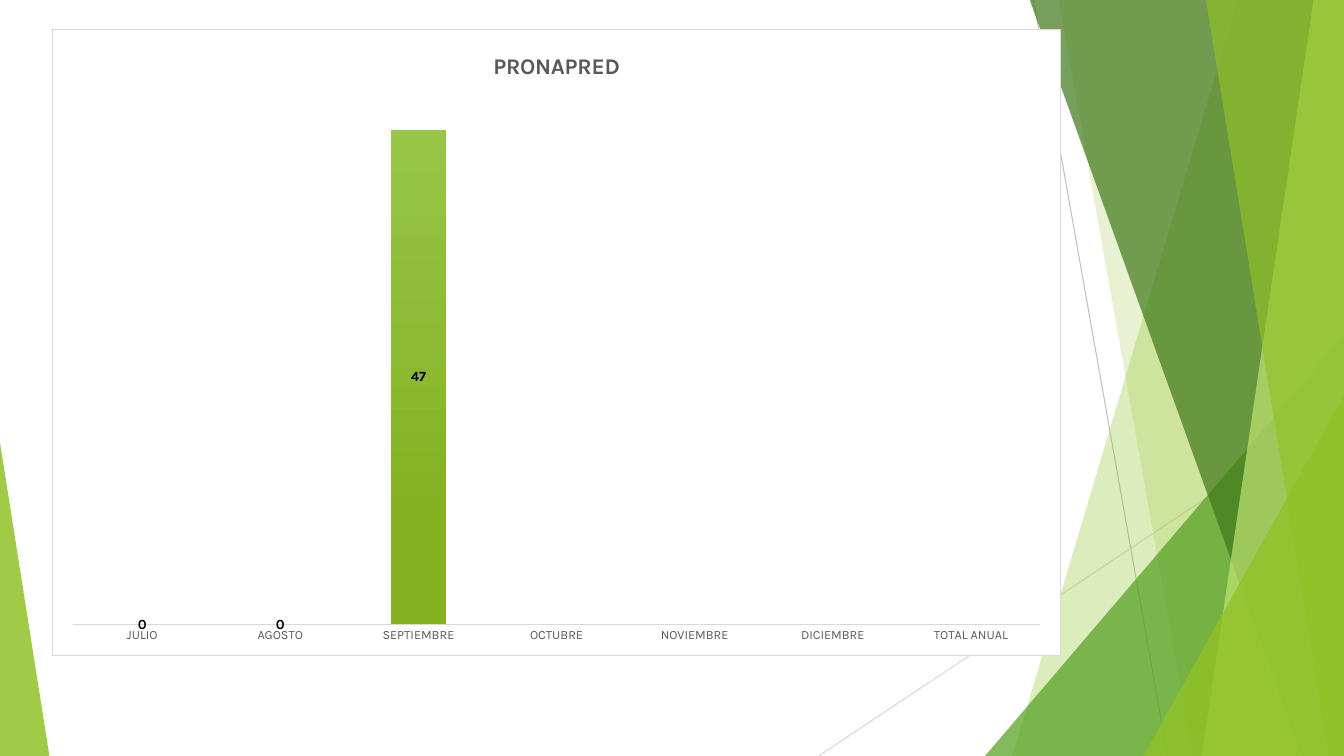
from dataclasses import dataclass

from lxml import etree
from pptx import Presentation
from pptx.chart.data import CategoryChartData
from pptx.dml.color import RGBColor
from pptx.enum import chart as ch, shapes as sh
from pptx.oxml import parse_xml
from pptx.oxml.ns import nsdecls, qn
from pptx.util import Inches, Pt


@dataclass(frozen=True)
class Theme:
    font: str = "Karla"
    lime: str = "90C226"
    green: str = "54A021"
    dark: str = "3F7819"
    pale: str = "C0E474"
    white: str = "FFFFFF"
    black: str = "000000"
    gray: str = "595959"
    rule: str = "D9D9D9"
    ray: str = "BFBFBF"
    top: str = "97C547"
    base: str = "84B223"
    title: int = 16
    label: int = 10
    tick: int = 9


T = Theme()
WIDE, HIGH = 13.33, 7.5
MONTHS = ("JULIO", "AGOSTO", "SEPTIEMBRE", "OCTUBRE", "NOVIEMBRE",
          "DICIEMBRE", "TOTAL ANUAL")
COUNTS = (0, 0, 47, None, None, None, None)


def rgb(color):
    return RGBColor.from_string(color)


def paint(shape, color, alpha):
    """Fill a shape with a colour at alpha percent opacity."""
    shape.shadow.inherit = False
    shape.line.fill.background()
    shape.fill.solid()
    shape.fill.fore_color.rgb = rgb(color)
    tint = shape.fill._xPr.find(".//" + qn("a:srgbClr"))
    etree.SubElement(tint, qn("a:alpha")).set("val", str(alpha * 1000))


def add_ray(slide, start, end, color):
    ends = [Inches(v) for v in (*start, *end)]
    ray = slide.shapes.add_connector(sh.MSO_CONNECTOR.STRAIGHT, *ends)
    ray.line.color.rgb = rgb(color)
    ray.line.width = Pt(0.75)
    etree.SubElement(ray._element.spPr, qn("a:effectLst"))


def add_band(slide, top, foot, color, alpha):
    """Fill from a slanted left edge to the right side of the slide."""
    points = [(top, -0.01), (WIDE, -0.01), (WIDE, HIGH), (foot, HIGH)]
    spots = [(Inches(x), Inches(y)) for x, y in points]
    pen = slide.shapes.build_freeform(*spots[0])
    pen.add_line_segments(spots[1:], close=True)
    paint(pen.convert_to_shape(), color, alpha)


def add_wedge(slide, left, width, height, apex, color, alpha):
    """Stand a triangle on the bottom edge of the slide."""
    box = [Inches(v) for v in (left, HIGH - height, width, height)]
    wedge = slide.shapes.add_shape(sh.MSO_SHAPE.ISOSCELES_TRIANGLE, *box)
    wedge.adjustments[0] = apex
    paint(wedge, color, alpha)


def set_font(font, size, color, bold=False):
    font.name = T.font
    font.size = Pt(size)
    font.bold = bold
    font.color.rgb = rgb(color)


def frame(chart):
    """Give the chart its background, border and plot position."""
    back = parse_xml(
        f'<c:spPr {nsdecls("c", "a")}>'
        f'<a:solidFill><a:srgbClr val="{T.white}"/></a:solidFill>'
        f'<a:ln w="{Pt(0.75)}"><a:solidFill><a:srgbClr val="{T.rule}"/>'
        '</a:solidFill></a:ln></c:spPr>')
    root = chart._chartSpace
    root.find(qn("c:txPr")).addprevious(back)

    area = root.find(".//" + qn("c:plotArea"))
    for old in area.findall(qn("c:layout")):
        area.remove(old)
    spot = {"layoutTarget": "inner", "xMode": "edge", "yMode": "edge",
            "x": 0.02, "y": 0.11, "w": 0.96, "h": 0.84}
    rows = "".join(f'<c:{k} val="{v}"/>' for k, v in spot.items())
    area.insert(0, parse_xml(
        f'<c:layout {nsdecls("c")}><c:manualLayout>{rows}'
        '</c:manualLayout></c:layout>'))


def style_bars(chart):
    plot = chart.plots[0]
    plot.gap_width, plot.overlap = 150, 100
    plot.vary_by_categories = False
    bars = plot.series[0]
    fill = bars.format.fill
    fill.gradient()
    fill.gradient_angle = 270
    stops = ((0, T.top), (0.78, T.base))
    for stop, (place, color) in zip(fill.gradient_stops, stops):
        stop.position = place
        stop.color.rgb = rgb(color)
    tags = bars.data_labels
    tags.show_value = True
    tags.position = ch.XL_LABEL_POSITION.CENTER
    set_font(tags.font, T.label, T.black, True)


def style_axes(chart):
    months = chart.category_axis
    months.major_tick_mark = ch.XL_TICK_MARK.NONE
    months.format.line.color.rgb = rgb(T.rule)
    months.format.line.width = Pt(1)
    set_font(months.tick_labels.font, T.tick, T.gray)
    scale = chart.value_axis
    scale.minimum_scale, scale.maximum_scale = 0, 50
    scale.has_major_gridlines = False
    scale.visible = False


def add_columns(slide):
    data = CategoryChartData()
    data.categories = MONTHS
    data.add_series("Series 1", COUNTS)
    box = [Inches(v) for v in (0.52, 0.29, 10, 6.22)]
    chart = slide.shapes.add_chart(
        ch.XL_CHART_TYPE.COLUMN_STACKED, *box, data).chart
    set_font(chart.font, T.label, T.black)
    chart.has_legend = False
    chart.has_title = True
    head = chart.chart_title.text_frame
    head.text = "PRONAPRED"
    set_font(head.paragraphs[0].font, T.title, T.gray, True)
    chart.chart_title.include_in_layout = False
    style_bars(chart)
    style_axes(chart)
    frame(chart)


def add_decor(slide):
    add_ray(slide, (10.25, 0), (11.58, HIGH), T.ray)
    add_ray(slide, (WIDE, 4.03), (8.12, HIGH), T.rule)
    add_band(slide, 12.28, 10.04, T.lime, 30)
    add_band(slide, 10.5, 11.83, T.lime, 20)
    add_wedge(slide, 9.77, 3.56, 4.17, 1, T.green, 72)
    add_band(slide, 10.21, 12.91, T.dark, 70)
    add_band(slide, 13.03, 11.92, T.pale, 70)
    add_band(slide, 11.96, 13.18, T.lime, 65)
    add_wedge(slide, 11.34, 1.99, 3.57, 1, T.lime, 80)
    add_wedge(slide, 0, 0.49, 3.11, 0, T.lime, 85)


def main():
    deck = Presentation()
    deck.slide_width, deck.slide_height = Inches(WIDE), Inches(HIGH)
    slide = deck.slides.add_slide(deck.slide_layouts[6])
    add_decor(slide)
    add_columns(slide)
    deck.save("out.pptx")


if __name__ == "__main__":
    main()
